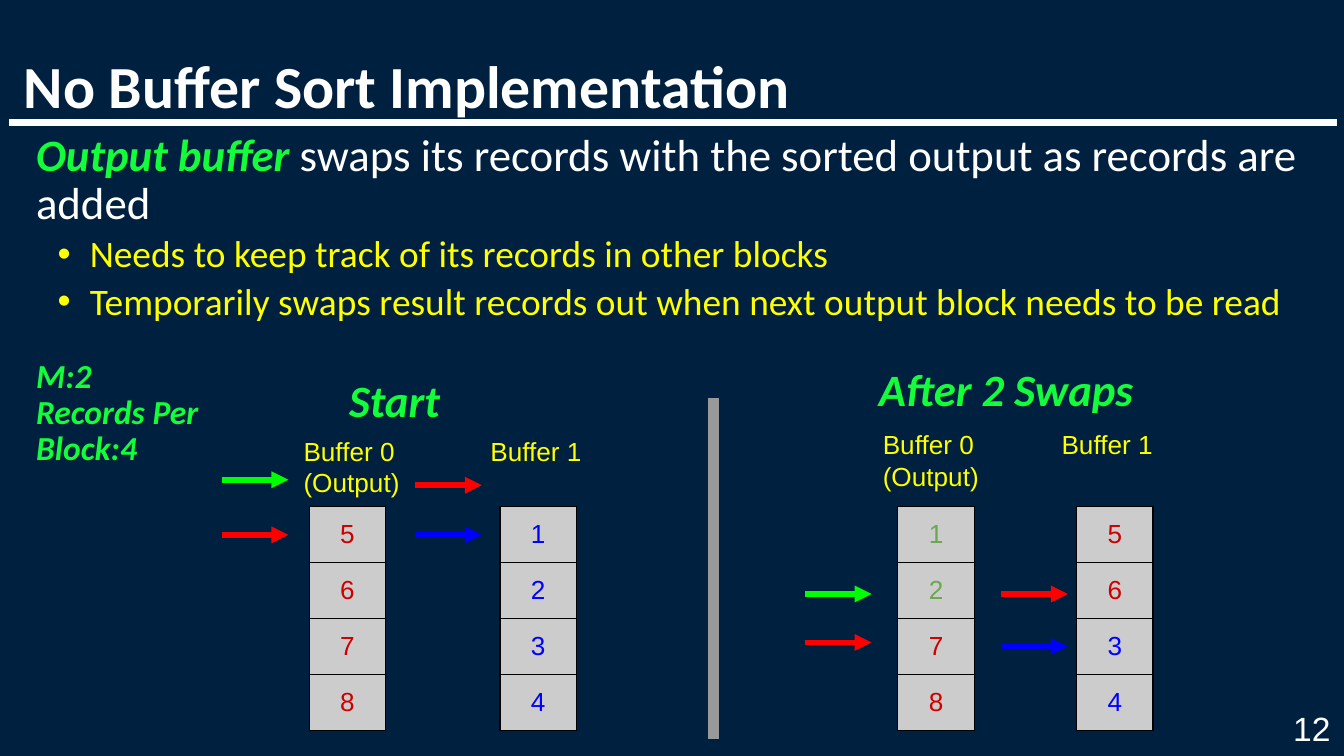
"""Build the slide on swapping records between two sort buffers."""
from lxml.etree import SubElement
from pptx import Presentation
from pptx.dml.color import RGBColor
from pptx.enum.shapes import MSO_CONNECTOR as Connector
from pptx.enum.text import MSO_ANCHOR as Anchor, PP_ALIGN as Align
from pptx.oxml.ns import qn
from pptx.util import Inches, Pt

WIDTH = Inches(10)
HEIGHT = WIDTH * 9 // 16
UNIT = WIDTH / 100

NAVY = RGBColor(0x00, 0x20, 0x40)
WHITE = RGBColor(0xFF, 0xFF, 0xFF)
BLACK = RGBColor(0x00, 0x00, 0x00)
MINT = RGBColor(0x14, 0xFD, 0x3A)
YELLOW = RGBColor(0xFF, 0xFF, 0x00)
GREEN = RGBColor(0x00, 0xFF, 0x00)
RED = RGBColor(0xFF, 0x00, 0x00)
BLUE = RGBColor(0x00, 0x00, 0xFF)
GREY = RGBColor(0x99, 0x99, 0x99)
SILVER = RGBColor(0xCC, 0xCC, 0xCC)
CRIMSON = RGBColor(0xCC, 0x00, 0x00)
LEAF = RGBColor(0x6A, 0xA8, 0x4F)

TITLE = {"name": "Calibri", "size": Pt(32), "bold": True}
LEAD = {"name": "Calibri", "size": Pt(24)}
HEADING = {**LEAD, "bold": True, "italic": True}
DETAIL = {"name": "Calibri", "size": Pt(20)}
SETTING = {**HEADING, "size": Pt(18)}
LABEL = {"name": "Arial", "size": Pt(14)}
NUMBER = {"name": "Arial", "size": Pt(18)}

TABLE_TOP, CELL_WIDTH, CELL_HEIGHT = 37.7, 5.7, 4.17
ARROW_LENGTH = 4.95


def grid(*counts):
    """Turn counts of grid columns or rows into lengths."""
    return [round(count * UNIT) for count in counts]


def set_formats(target, formats):
    """Set each named attribute of the target."""
    for name, value in formats.items():
        setattr(target, name, value)


def add_span(para, text, color, style):
    """Add a styled run to a paragraph."""
    span = para.add_run()
    span.text = text
    set_formats(span.font, style)
    span.font.color.rgb = color


def add_box(page, place, inset=1, anchor=Anchor.TOP, side=1):
    """Add a wrapping text box and return its text frame."""
    frame = page.shapes.add_textbox(*grid(*place)).text_frame
    across, down = grid(side, inset)
    set_formats(frame, {
        "word_wrap": True, "vertical_anchor": anchor,
        "margin_left": across, "margin_right": across,
        "margin_top": down, "margin_bottom": down})
    return frame


def add_lines(frame, lines, color, style, **formats):
    """Write one paragraph for each line of text."""
    for index, text in enumerate(lines):
        para = frame.add_paragraph() if index else frame.paragraphs[0]
        set_formats(para, formats)
        add_span(para, text, color, style)


def set_indent(para, left, first=0):
    """Set the left margin and first-line indent of a paragraph."""
    margin, indent = grid(left, first)
    props = para._p.get_or_add_pPr()
    props.set("marL", str(margin))
    props.set("indent", str(indent))
    return props


def add_bullet(para, color):
    """Give a paragraph a round hanging bullet."""
    props = set_indent(para, 5, -2.4)
    SubElement(SubElement(props, qn("a:buClr")), qn("a:srgbClr"), val=str(color))
    SubElement(props, qn("a:buFont"), typeface="Arial")
    SubElement(props, qn("a:buChar"), char="•")


def add_line(page, start, end, color, weight, arrow=False):
    """Draw a straight line, with an arrowhead if asked."""
    line = page.shapes.add_connector(Connector.STRAIGHT, *grid(*start, *end))
    line.line.color.rgb = color
    line.line.width = Pt(weight)
    if arrow:
        SubElement(line.line._get_or_add_ln(), qn("a:tailEnd"), type="triangle")
    SubElement(line._element.spPr, qn("a:effectLst"))


def add_borders(cell):
    """Outline all four sides of a cell."""
    props = cell._tc.get_or_add_tcPr()
    for index, side in enumerate(("lnL", "lnR", "lnT", "lnB")):
        edge = SubElement(props, qn(f"a:{side}"), w=str(Pt(0.75)))
        fill = SubElement(edge, qn("a:solidFill"))
        SubElement(fill, qn("a:srgbClr"), val=str(BLACK))
        props.remove(edge)
        props.insert(index, edge)


def add_buffer(page, left, records):
    """Add a one-column table of coloured records."""
    place = grid(left, TABLE_TOP, CELL_WIDTH, CELL_HEIGHT * len(records))
    table = page.shapes.add_table(len(records), 1, *place).table
    set_formats(table, {"first_row": False, "horz_banding": False})
    across, down = grid(1, 0.8)
    for row, (text, color) in enumerate(records):
        cell = table.cell(row, 0)
        set_formats(cell, {
            "margin_left": across, "margin_right": across,
            "margin_top": down, "margin_bottom": down,
            "vertical_anchor": Anchor.MIDDLE})
        cell.fill.solid()
        cell.fill.fore_color.rgb = SILVER
        add_borders(cell)
        add_lines(cell.text_frame, [text], color, LABEL, alignment=Align.CENTER)


def add_header(page):
    """Add the title, its rule and the page number."""
    add_line(page, (0.7, 9.1), (99.5, 9.1), WHITE, 3.75)
    title = add_box(page, (0.8, 0, 98.3, 9), 0, Anchor.BOTTOM)
    add_lines(title, ["No Buffer Sort Implementation"], WHITE, TITLE,
              line_spacing=0.89)
    number = add_box(page, (95.7, 52.7, 3.3, 2.1), 0, side=0)
    add_lines(number, ["12"], WHITE, NUMBER, alignment=Align.RIGHT)


def add_body(page):
    """Add the explanation and the settings of the example."""
    body = add_box(page, (0.7, 9.4, 98.6, 18.1), 0.5)
    lead = body.paragraphs[0]
    lead.line_spacing = 0.89
    set_indent(lead, 1)
    add_span(lead, "Output buffer", MINT, HEADING)
    add_span(lead, " swaps its records with the sorted output as records are added",
             WHITE, LEAD)
    for text in ("Needs to keep track of its records in other blocks",
                 "Temporarily swaps result records out when next output block "
                 "needs to be read"):
        para = body.add_paragraph()
        set_formats(para, {"line_spacing": 0.89, "space_before": Pt(4), "level": 1})
        add_bullet(para, YELLOW)
        add_span(para, text, YELLOW, DETAIL)
    settings = add_box(page, (0.7, 26.3, 15.1, 10.2), 0.5)
    add_lines(settings, ["M:2", "Records Per Block:4"], MINT, SETTING,
              line_spacing=0.89)
    for para in settings.paragraphs:
        set_indent(para, 1)


def add_stage(page, heading, place, label_top, labels, buffers, arrows):
    """Add one stage: heading, buffer labels, buffers and pointers."""
    add_lines(add_box(page, place), [heading], MINT, HEADING)
    for left, lines in zip(labels, (["Buffer 0", "(Output)"], ["Buffer 1"])):
        box = add_box(page, (left, label_top, 10.1, 6.8))
        add_lines(box, lines, YELLOW, LABEL)
    for left, records in buffers:
        add_buffer(page, left, records)
    for left, top, color in arrows:
        add_line(page, (left, top), (left + ARROW_LENGTH, top), color, 3, True)


def paint(digits, color):
    """Pair each digit with a colour."""
    return [(digit, color) for digit in digits]


def main():
    """Build and save the deck."""
    deck = Presentation()
    set_formats(deck, {"slide_width": WIDTH, "slide_height": HEIGHT})
    page = deck.slides.add_slide(deck.slide_layouts[6])
    page.background.fill.solid()
    page.background.fill.fore_color.rgb = NAVY
    add_header(page)
    add_body(page)
    add_line(page, (53.1, 29.6), (53.1, 55), GREY, 6)
    add_stage(page, "Start", (25, 26.7, 11.4, 5.4), 31.4, (21.6, 35.5),
              [(23, paint("5678", CRIMSON)), (37.2, paint("1234", BLUE))],
              [(16.5, 35.7, GREEN), (16.5, 39.8, RED),
               (30.9, 36.1, RED), (30.9, 39.8, BLUE)])
    add_stage(page, "After 2 Swaps", (64.4, 25.9, 25.2, 5.4), 30.9, (64.7, 78),
              [(66.8, paint("12", LEAF) + paint("78", CRIMSON)),
               (80.1, paint("56", CRIMSON) + paint("34", BLUE))],
              [(59.9, 44.2, GREEN), (59.9, 47.8, RED),
               (74.5, 44.2, RED), (74.5, 48.1, BLUE)])
    deck.save("out.pptx")


if __name__ == "__main__":
    main()
